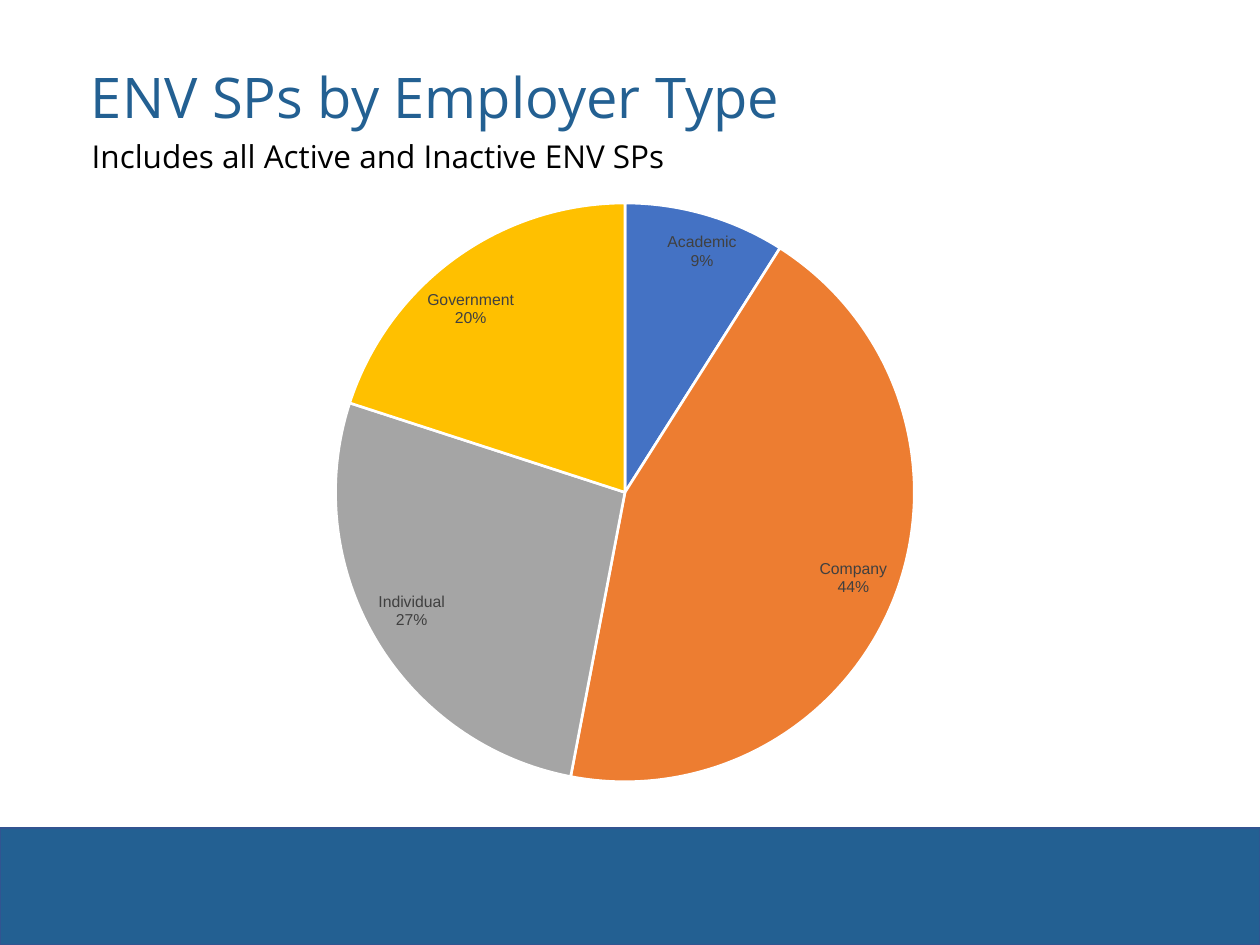
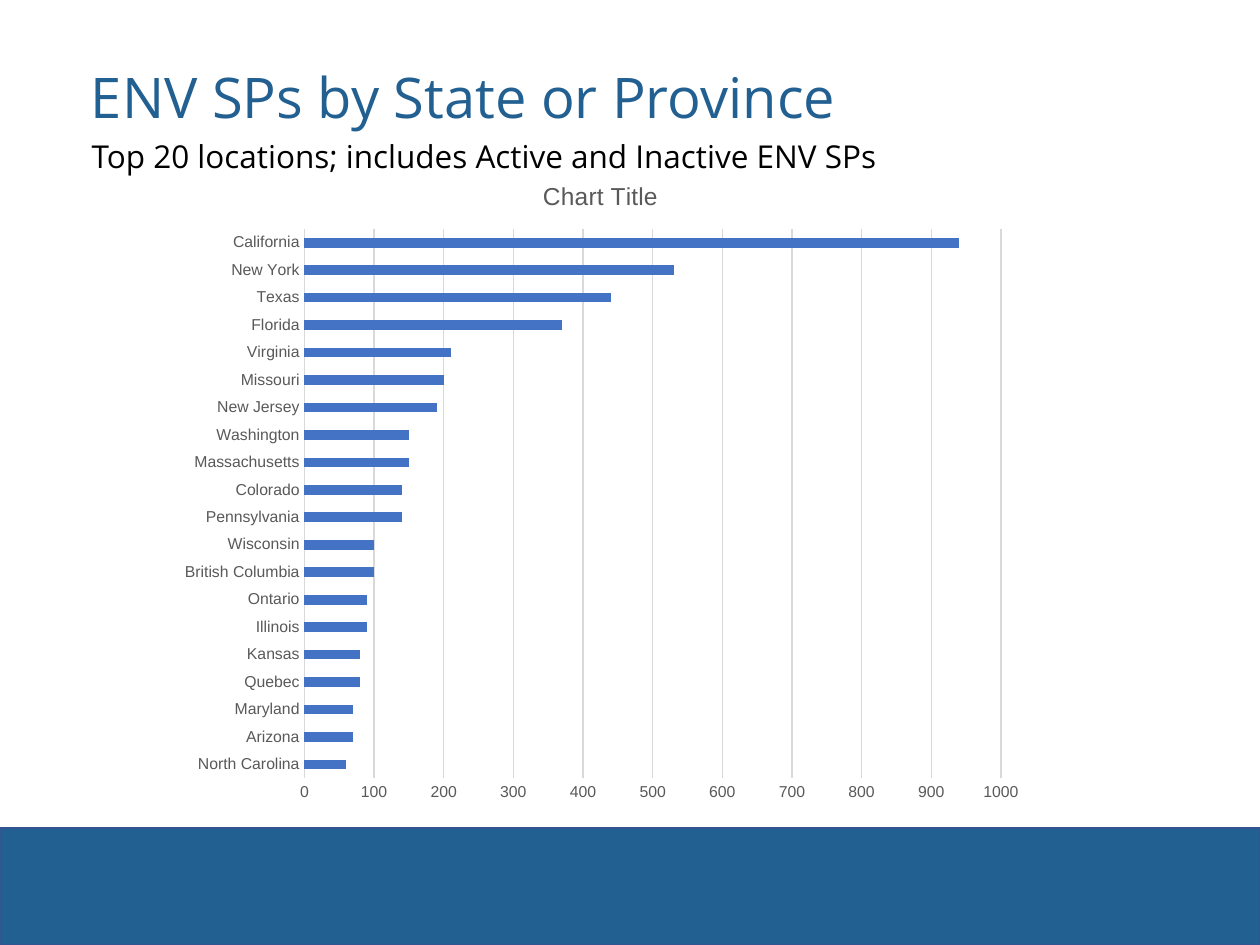
import pptx
import pptx.util
import pptx.chart.data
import pptx.dml.color
import pptx.enum.chart
import pptx.enum.shapes
import pptx.enum.text
import pptx.oxml
import pptx.oxml.ns

Cm, Pt = pptx.util.Cm, pptx.util.Pt
RGB = pptx.dml.color.RGBColor.from_string
XL = pptx.enum.chart
qn = pptx.oxml.ns.qn
CHART_NS = pptx.oxml.ns.nsdecls("c")

COLORS = {
    "band": "236092", "band_line": "325491", "black": "000000", "white": "FFFFFF",
    "label": "404040", "axis": "595959", "grid": "D9D9D9",
    "blue": "4472C4", "orange": "ED7D31", "gray": "A5A5A5", "gold": "FFC000",
}


def write(tf, text, font="Open Sans", size=18, color="black", spacing=None):
    p = tf.paragraphs[0]
    p.alignment = pptx.enum.text.PP_ALIGN.LEFT
    p.line_spacing = spacing
    r = p.add_run()
    r.text = text
    r.font.name, r.font.size = font, Pt(size)
    r.font.bold = False
    r.font.color.rgb = RGB(COLORS[color])


def style_chart(chart, **layout):
    chart.font.name, chart.font.size = "Arial", Pt(10)
    chart.font.color.rgb = RGB(COLORS["black"])
    chart.has_legend = False
    plot_area = chart.element.find(".//" + qn("c:plotArea"))
    for old in plot_area.findall(qn("c:layout")):
        plot_area.remove(old)
    sizes = "".join(f'<c:{name} val="{value}"/>' for name, value in layout.items())
    plot_area.insert(0, pptx.oxml.parse_xml(
        f'<c:layout {CHART_NS}><c:manualLayout>'
        '<c:layoutTarget val="inner"/><c:xMode val="edge"/><c:yMode val="edge"/>'
        f'{sizes}</c:manualLayout></c:layout>'))


prs = pptx.Presentation()
prs.slide_width, prs.slide_height = Cm(25.4), Cm(19.05)
layout = prs.slide_layouts[5]

headings = [
    ("ENV SPs by Employer Type", "Includes all Active and Inactive ENV SPs"),
    ("ENV SPs by State or Province",
     "Top 20 locations; includes Active and Inactive ENV SPs"),
]
slides = []
for title, subtitle in headings:
    s = prs.slides.add_slide(layout)
    slides.append(s)
    sp = s.shapes.title
    sp.left, sp.top, sp.width, sp.height = Cm(1.58), Cm(1.07), Cm(22.22), Cm(1.9)
    sp.text_frame.auto_size = pptx.enum.text.MSO_AUTO_SIZE.NONE
    sp.text_frame.vertical_anchor = pptx.enum.text.MSO_ANCHOR.MIDDLE
    write(sp.text_frame, title, size=32, color="band", spacing=0.9)
    tf = s.shapes.add_textbox(Cm(1.6), Cm(2.64), Cm(22.91), Cm(1.02)).text_frame
    tf.word_wrap = True
    tf.auto_size = pptx.enum.text.MSO_AUTO_SIZE.SHAPE_TO_FIT_TEXT
    write(tf, subtitle)

band = slides[0].shapes.add_shape(
    pptx.enum.shapes.MSO_SHAPE.RECTANGLE, 0, Cm(16.69), prs.slide_width, Cm(2.36))
band.shadow.inherit = False
band.fill.solid()
band.fill.fore_color.rgb = RGB(COLORS["band"])
band.line.color.rgb = RGB(COLORS["band_line"])
band.line.width = Pt(1)
layout.shapes.element.insert(2, band.element)

employers = {"Academic": (9, "blue"), "Company": (44, "orange"),
             "Individual": (27, "gray"), "Government": (20, "gold")}
data = pptx.chart.data.CategoryChartData()
data.categories = list(employers)
data.add_series("Series 1", [share for share, color in employers.values()])
pie = slides[0].shapes.add_chart(
    XL.XL_CHART_TYPE.PIE, Cm(1.65), Cm(2.9), Cm(22.12), Cm(13.26), data).chart
style_chart(pie, x=0.23, y=0.09, w=0.53, h=0.88)
pie.has_title = False
pie.plots[0].vary_by_categories = True
series = pie.plots[0].series[0]
for i, (share, color) in enumerate(employers.values()):
    wedge = series.points[i].format
    wedge.fill.solid()
    wedge.fill.fore_color.rgb = RGB(COLORS[color])
    wedge.line.color.rgb = RGB(COLORS["white"])
    wedge.line.width = Pt(1.5)
labels = series.data_labels
labels.show_value = False
labels.show_category_name = True
labels.show_percentage = True
labels.position = XL.XL_LABEL_POSITION.BEST_FIT
labels.font.name, labels.font.size = "Arial", Pt(9)
labels.font.color.rgb = RGB(COLORS["label"])
separator = pptx.oxml.parse_xml(f'<c:separator {CHART_NS}>\n</c:separator>')
pie.element.find(".//" + qn("c:ser")).find(".//" + qn("c:showBubbleSize")).addnext(separator)

locations = {
    "North Carolina": 60, "Arizona": 70, "Maryland": 70, "Quebec": 80, "Kansas": 80,
    "Illinois": 90, "Ontario": 90, "British Columbia": 100, "Wisconsin": 100,
    "Pennsylvania": 140, "Colorado": 140, "Massachusetts": 150, "Washington": 150,
    "New Jersey": 190, "Missouri": 200, "Virginia": 210, "Florida": 370,
    "Texas": 440, "New York": 530, "California": 940,
}
data = pptx.chart.data.CategoryChartData()
data.categories = list(locations)
data.add_series("Series 1", list(locations.values()))
bar = slides[1].shapes.add_chart(
    XL.XL_CHART_TYPE.BAR_CLUSTERED, Cm(3.33), Cm(3.15), Cm(17.55), Cm(13.34), data).chart
style_chart(bar, x=0.16, y=0.11, w=0.8, h=0.83)
bar.has_title = True
bar.chart_title.include_in_layout = False
write(bar.chart_title.text_frame, "Chart Title", font="Arial", size=14, color="axis")
plot = bar.plots[0]
plot.gap_width = 182
plot.vary_by_categories = False
fill = plot.series[0].format.fill
fill.solid()
fill.fore_color.rgb = RGB(COLORS["blue"])
for axis in (bar.category_axis, bar.value_axis):
    axis.major_tick_mark = axis.minor_tick_mark = XL.XL_TICK_MARK.NONE
    font = axis.tick_labels.font
    font.name, font.size = "Arial", Pt(9)
    font.color.rgb = RGB(COLORS["axis"])
bar.value_axis.minimum_scale = 0
bar.value_axis.maximum_scale = 1000
bar.value_axis.major_unit = 100
bar.value_axis.has_major_gridlines = True
bar.value_axis.format.line.fill.background()
for line in (bar.category_axis.format.line, bar.value_axis.major_gridlines.format.line):
    line.color.rgb = RGB(COLORS["grid"])
    line.width = Pt(0.75)

prs.save("out.pptx")
